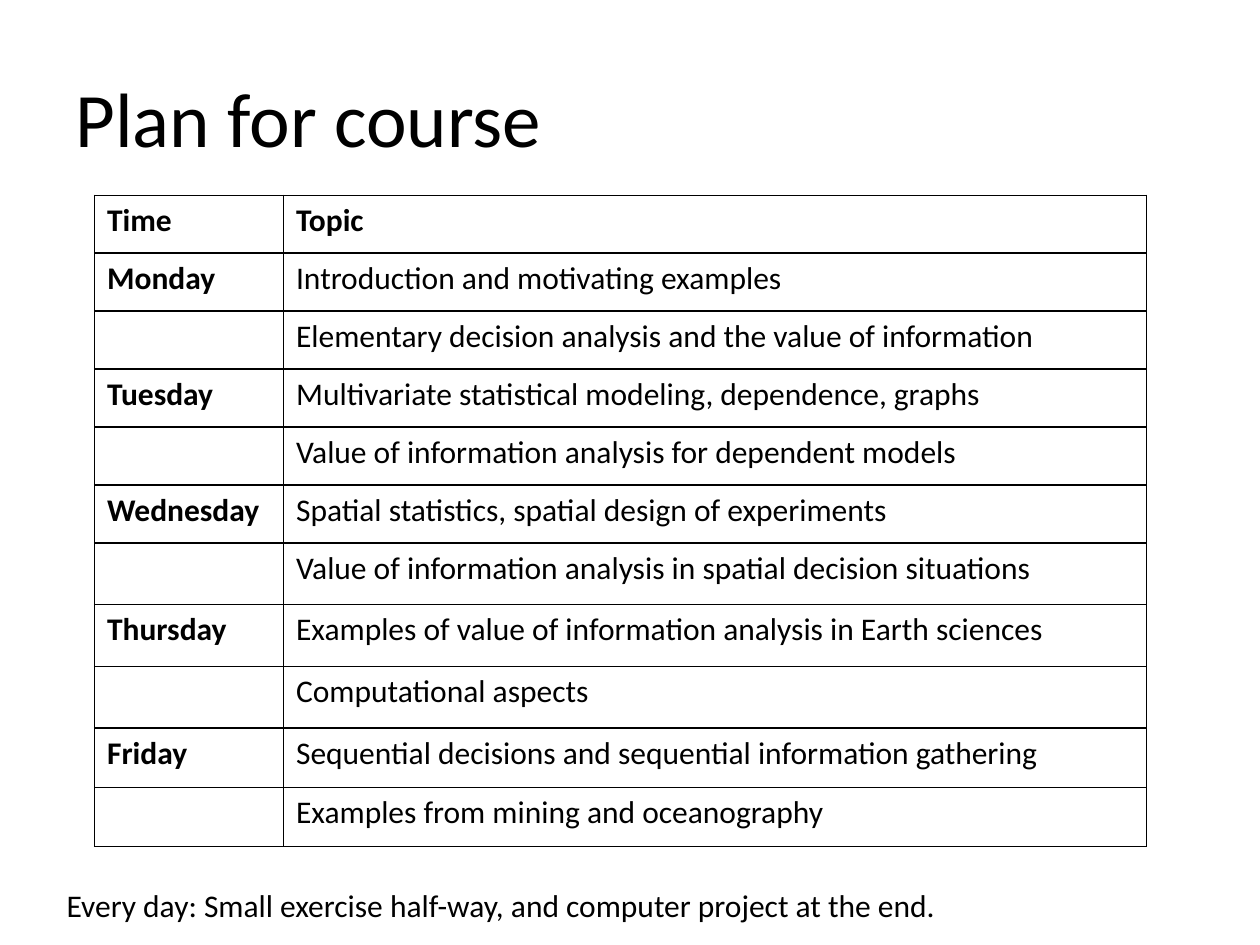
from dataclasses import dataclass

import lxml.etree
import pptx
import pptx.dml.color
import pptx.enum.text
import pptx.oxml.ns
import pptx.util
from pptx.util import Inches

BLACK = pptx.dml.color.RGBColor(0x00, 0x00, 0x00)
FONT_NAME = "Calibri"
BORDER_WIDTH = pptx.util.Pt(1)


@dataclass(frozen=True)
class Session:
    day: str
    topic: str
    height: float
    heading: bool = False


SESSIONS = [
    Session("Time", "Topic", 0.46, heading=True),
    Session("Monday", "Introduction and motivating examples", 0.46),
    Session("", "Elementary decision analysis and the value of information", 0.46),
    Session("Tuesday", "Multivariate statistical modeling, dependence, graphs", 0.46),
    Session("", "Value of information analysis for dependent models", 0.46),
    Session("Wednesday", "Spatial statistics, spatial design of experiments", 0.46),
    Session("", "Value of information analysis in spatial decision situations", 0.49),
    Session("Thursday", "Examples of value of information analysis in Earth sciences", 0.49),
    Session("", "Computational aspects", 0.49),
    Session("Friday", "Sequential decisions and sequential information gathering", 0.47),
    Session("", "Examples from mining and oceanography", 0.47),
]
COLUMN_WIDTHS = (1.5, 6.85)


def write(frame, text: str, size: int, bold: bool = False) -> None:
    frame.text = text
    paragraph = frame.paragraphs[0]
    paragraph.alignment = pptx.enum.text.PP_ALIGN.LEFT
    paragraph.font.name = FONT_NAME
    paragraph.font.size = pptx.util.Pt(size)
    paragraph.font.bold = bold
    paragraph.font.color.rgb = BLACK


def add_borders(cell) -> None:
    qn = pptx.oxml.ns.qn
    properties = cell._tc.get_or_add_tcPr()
    for side in ("lnL", "lnR", "lnT", "lnB"):
        border = lxml.etree.SubElement(properties, qn(f"a:{side}"), w=str(BORDER_WIDTH))
        fill = lxml.etree.SubElement(border, qn("a:solidFill"))
        lxml.etree.SubElement(fill, qn("a:srgbClr"), val=str(BLACK))


def add_schedule(slide, sessions: list[Session]) -> None:
    schedule = slide.shapes.add_table(
        len(sessions), len(COLUMN_WIDTHS),
        Inches(0.75), Inches(1.55),
        Inches(sum(COLUMN_WIDTHS)), Inches(sum(s.height for s in sessions)),
    ).table
    schedule.first_row = False
    schedule.horz_banding = False
    for column, width in zip(schedule.columns, COLUMN_WIDTHS):
        column.width = Inches(width)
    for row, session in zip(schedule.rows, sessions):
        row.height = Inches(session.height)
        entries = ((session.day, True), (session.topic, session.heading))
        for cell, (text, bold) in zip(row.cells, entries):
            write(cell.text_frame, text, 18, bold)
            add_borders(cell)
            cell.fill.background()


def main() -> None:
    presentation = pptx.Presentation()
    presentation.slide_width = Inches(10)
    presentation.slide_height = Inches(7.5)
    slide = presentation.slides.add_slide(presentation.slide_layouts[5])

    title = slide.shapes.title
    title.left, title.top = Inches(0.5), Inches(0.3)
    title.width, title.height = Inches(9.38), Inches(1.25)
    title.text_frame.vertical_anchor = pptx.enum.text.MSO_ANCHOR.MIDDLE
    write(title.text_frame, "Plan for course", 44)

    add_schedule(slide, SESSIONS)

    daily_note = slide.shapes.add_textbox(
        Inches(0.43), Inches(6.98), Inches(9.45), Inches(0.4)
    ).text_frame
    daily_note.word_wrap = True
    daily_note.auto_size = pptx.enum.text.MSO_AUTO_SIZE.SHAPE_TO_FIT_TEXT
    write(
        daily_note,
        "Every day: Small exercise half-way, and computer project at the end.",
        18,
    )

    presentation.save("out.pptx")


if __name__ == "__main__":
    main()
